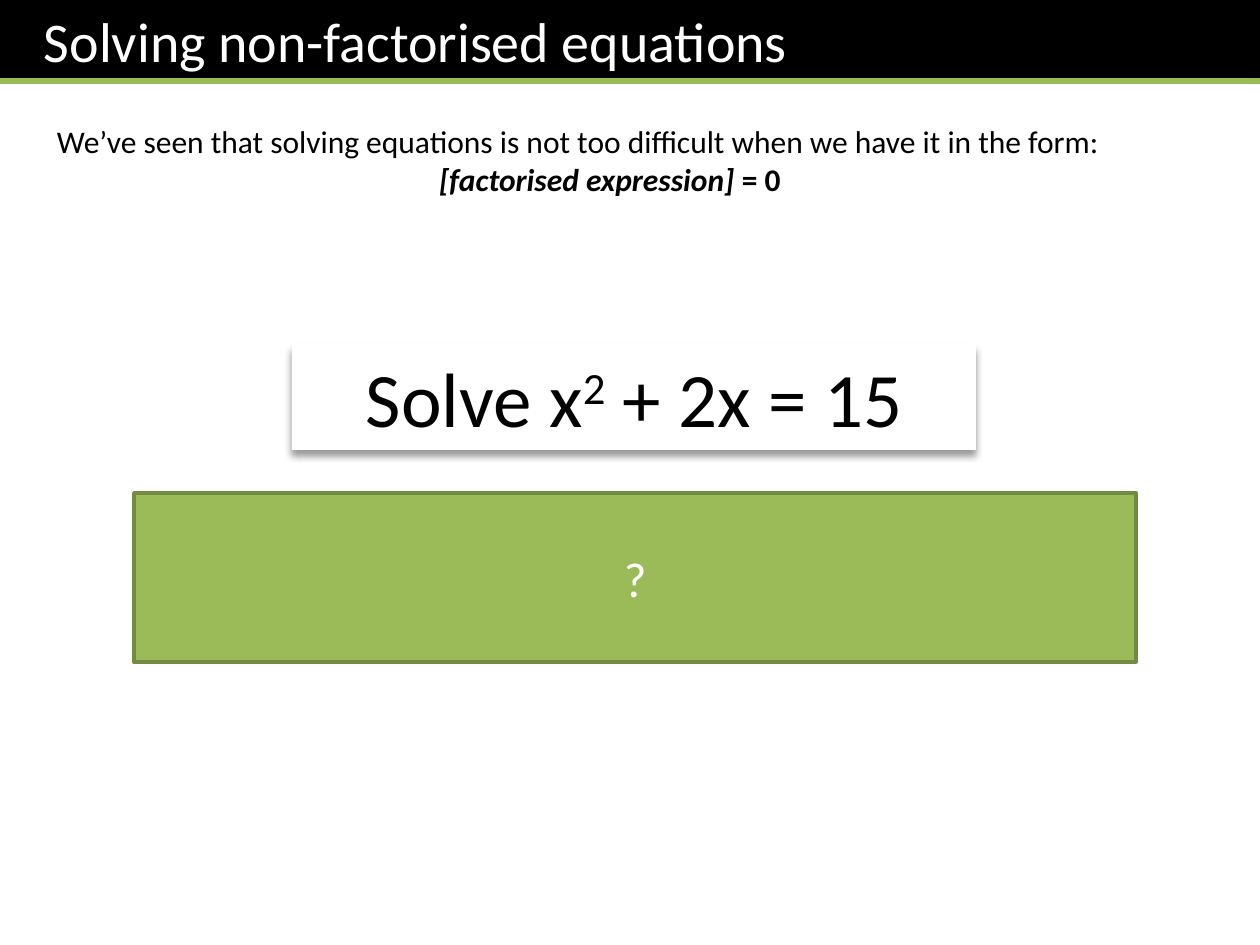
from dataclasses import dataclass
from typing import Optional

from lxml.etree import SubElement
from pptx import Presentation
from pptx.dml.color import RGBColor
from pptx.enum.shapes import MSO_CONNECTOR, MSO_SHAPE
from pptx.enum.text import MSO_ANCHOR, PP_ALIGN
from pptx.oxml.ns import qn
from pptx.util import Emu, Pt

BLACK = RGBColor(0x00, 0x00, 0x00)
WHITE = RGBColor(0xFF, 0xFF, 0xFF)
GREEN = RGBColor(0x9B, 0xBB, 0x59)
DARK_GREEN = RGBColor(0x73, 0x8A, 0x42)
FONT = "Calibri"
PX_PER_INCH = 126
SLIDE_WIDTH, SLIDE_HEIGHT = 1260, 945


def px(length: int) -> Emu:
    return Emu(round(length * 914400 / PX_PER_INCH))


@dataclass(frozen=True)
class Run:
    text: str
    bold: bool = False
    italic: bool = False
    superscript: bool = False


@dataclass(frozen=True)
class Paragraph:
    runs: tuple[Run, ...]
    align: PP_ALIGN = PP_ALIGN.CENTER


@dataclass(frozen=True)
class Panel:
    left: int
    top: int
    width: int
    height: int
    paragraphs: tuple[Paragraph, ...]
    size: int
    color: RGBColor
    fill: Optional[RGBColor] = None
    outline: Optional[RGBColor] = None
    raised: bool = False
    anchor: MSO_ANCHOR = MSO_ANCHOR.TOP
    inset_left: int = 13


PANELS = (
    Panel(0, 0, SLIDE_WIDTH, 83,
          (Paragraph((Run("Solving non-factorised equations"),), PP_ALIGN.LEFT),),
          32, WHITE, fill=BLACK, inset_left=44),
    Panel(44, 116, 1131, 89,
          (Paragraph((Run("We’ve seen that solving equations is not too difficult "
                          "when we have it in the form:"),), PP_ALIGN.LEFT),
           Paragraph((Run("[factorised expression] ", bold=True, italic=True),
                      Run("= 0", bold=True)))),
          18, BLACK),
    Panel(292, 344, 684, 106,
          (Paragraph((Run("Solve x"), Run("2", superscript=True), Run(" + 2x = 15"))),),
          44, BLACK, fill=WHITE, raised=True),
    Panel(134, 493, 1002, 169, (Paragraph((Run("?"),)),),
          28, WHITE, fill=GREEN, outline=DARK_GREEN, anchor=MSO_ANCHOR.MIDDLE),
)


def add_drop_shadow(shape) -> None:
    effects = shape._element.spPr.find(qn("a:effectLst"))
    shadow = SubElement(effects, qn("a:outerShdw"), blurRad=str(Pt(4)),
                        dist=str(Pt(3)), dir="5400000", algn="t", rotWithShape="0")
    color = SubElement(shadow, qn("a:srgbClr"), val=str(BLACK))
    SubElement(color, qn("a:alpha"), val="40000")


def write_text(frame, panel: Panel) -> None:
    frame.word_wrap = True
    frame.vertical_anchor = panel.anchor
    frame.margin_left = px(panel.inset_left)
    for index, content in enumerate(panel.paragraphs):
        paragraph = frame.add_paragraph() if index else frame.paragraphs[0]
        paragraph.alignment = content.align
        for part in content.runs:
            run = paragraph.add_run()
            run.text = part.text
            run.font.name = FONT
            run.font.size = Pt(panel.size)
            run.font.color.rgb = panel.color
            run.font.bold = part.bold
            run.font.italic = part.italic
            if part.superscript:
                run.font._element.set("baseline", "30000")


def add_panel(slide, panel: Panel) -> None:
    """Draw a filled rectangle, or a plain text box when there is no fill."""
    box = tuple(px(n) for n in (panel.left, panel.top, panel.width, panel.height))
    if panel.fill is None:
        shape = slide.shapes.add_textbox(*box)
    else:
        shape = slide.shapes.add_shape(MSO_SHAPE.RECTANGLE, *box)
        shape.fill.solid()
        shape.fill.fore_color.rgb = panel.fill
        if panel.outline is None:
            shape.line.fill.background()
        else:
            shape.line.color.rgb = panel.outline
            shape.line.width = Pt(2)
        shape.shadow.inherit = False
        if panel.raised:
            add_drop_shadow(shape)
    write_text(shape.text_frame, panel)


def add_title_rule(slide, y: int) -> None:
    rule = slide.shapes.add_connector(
        MSO_CONNECTOR.STRAIGHT, px(0), px(y), px(SLIDE_WIDTH), px(y))
    rule.line.color.rgb = GREEN
    rule.line.width = Pt(3)
    SubElement(rule._element.spPr, qn("a:effectLst"))


def main() -> None:
    presentation = Presentation()
    presentation.slide_width = px(SLIDE_WIDTH)
    presentation.slide_height = px(SLIDE_HEIGHT)
    slide = presentation.slides.add_slide(presentation.slide_layouts[6])
    banner, *body = PANELS
    add_panel(slide, banner)
    add_title_rule(slide, 81)
    for panel in body:
        add_panel(slide, panel)
    presentation.save("out.pptx")


if __name__ == "__main__":
    main()
